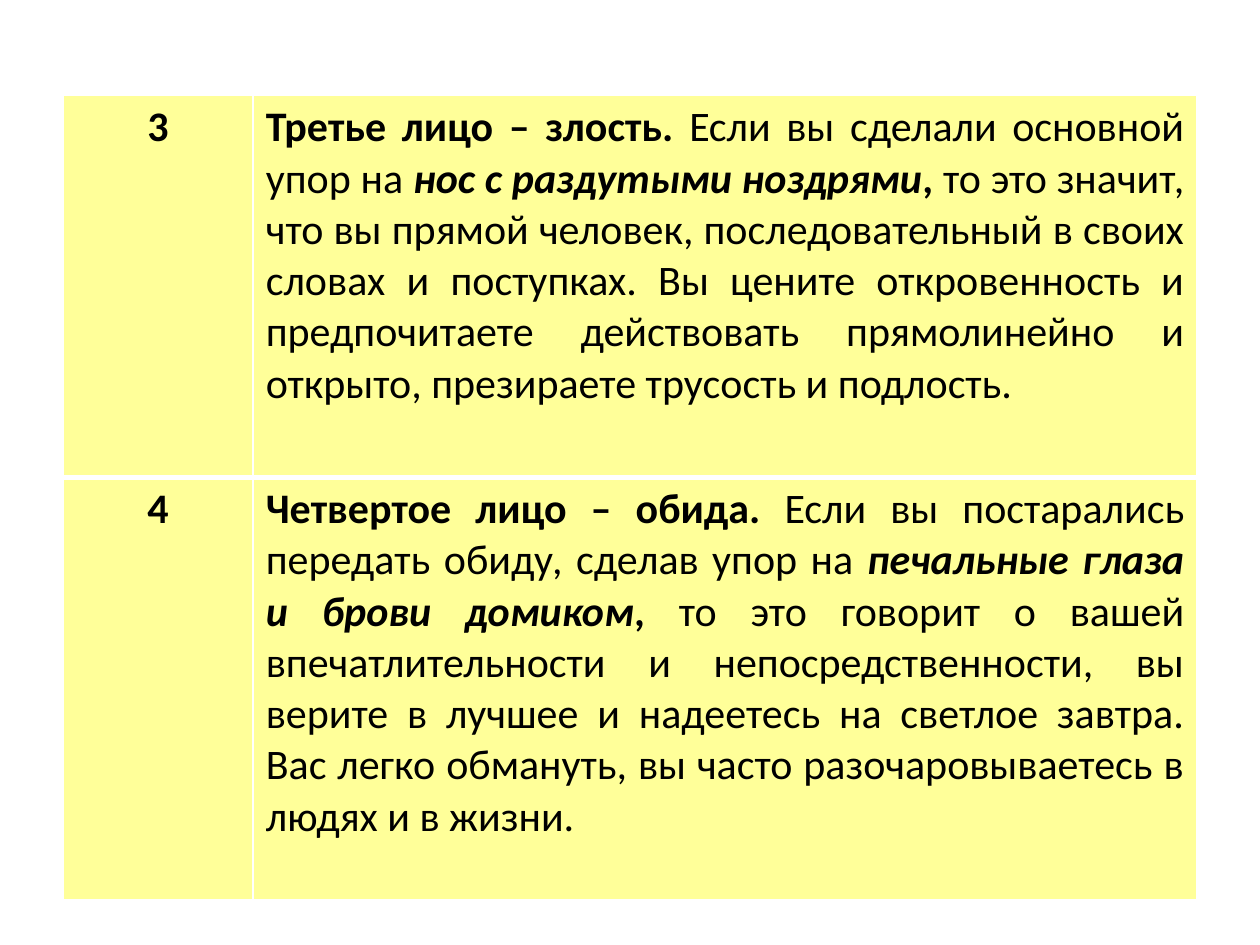
from dataclasses import dataclass

from lxml import etree
from pptx import Presentation
from pptx.dml.color import RGBColor
from pptx.enum.text import PP_ALIGN
from pptx.oxml.ns import qn
from pptx.util import Inches, Pt

CENTER, JUSTIFY = PP_ALIGN.CENTER, PP_ALIGN.JUSTIFY
BLANK_LAYOUT = 6
EDGES = ("lnL", "lnR", "lnT", "lnB")


@dataclass(frozen=True)
class Theme:
    """Colours, type and line widths of the slide."""
    font: str = "Calibri"
    size: int = 24
    ink: str = "000000"
    cell: str = "FFFF99"
    border: str = "FFFFFF"
    thin: int = 1
    thick: int = 3


THEME = Theme()

FACES = [
    ("3", "Третье лицо – злость. ", "Если вы сделали основной упор на ",
     "нос с раздутыми ноздрями",
     "то это значит, что вы прямой человек, последовательный в своих словах "
     "и поступках. Вы цените откровенность и предпочитаете действовать "
     "прямолинейно и открыто, презираете трусость и подлость."),
    ("4", "Четвертое лицо – обида. ",
     "Если вы постарались передать обиду, сделав упор на ",
     "печальные глаза и брови домиком",
     "то это говорит о вашей впечатлительности и непосредственности, вы "
     "верите в лучшее и надеетесь на светлое завтра. Вас легко обмануть, вы "
     "часто разочаровываетесь в людях и в жизни."),
]


def set_borders(cell, bottom):
    """Draw the four cell edges, with the given width at the bottom."""
    properties = cell._tc.get_or_add_tcPr()
    for edge in EDGES:
        width = bottom if edge == "lnB" else THEME.thin
        line = etree.SubElement(properties, qn(f"a:{edge}"), w=str(Pt(width)))
        fill = etree.SubElement(line, qn("a:solidFill"))
        etree.SubElement(fill, qn("a:srgbClr"), val=THEME.border)


def fill_cell(cell, pieces, alignment, bottom):
    """Write (text, bold, italic) pieces into a coloured cell."""
    set_borders(cell, bottom)
    cell.fill.solid()
    cell.fill.fore_color.rgb = RGBColor.from_string(THEME.cell)
    paragraph = cell.text_frame.paragraphs[0]
    paragraph.alignment = alignment
    for text, bold, italic in pieces:
        run = paragraph.add_run()
        run.text = text
        run.font.name = THEME.font
        run.font.size = Pt(THEME.size)
        run.font.bold = bold
        run.font.italic = italic
        run.font.color.rgb = RGBColor.from_string(THEME.ink)


def add_faces_table(slide, left, top, column_widths, row_heights):
    """Place the table of numbered faces and their meanings."""
    table = slide.shapes.add_table(
        len(FACES), len(column_widths), left, top,
        sum(column_widths), sum(row_heights)).table
    table.first_row = False
    table.horz_banding = False
    for column, width in zip(table.columns, column_widths):
        column.width = width
    for index, (number, title, lead, feature, meaning) in enumerate(FACES):
        table.rows[index].height = row_heights[index]
        bottom = THEME.thick if index == 0 else THEME.thin
        description = [(title, True, False), (lead, False, False),
                       (feature, True, True), (", ", True, False),
                       (meaning, False, False)]
        fill_cell(table.cell(index, 0), [(number, True, False)], CENTER, bottom)
        fill_cell(table.cell(index, 1), description, JUSTIFY, bottom)


def main():
    """Build and save the slide."""
    deck = Presentation()
    deck.slide_width, deck.slide_height = Inches(10), Inches(7.5)
    slide = deck.slides.add_slide(deck.slide_layouts[BLANK_LAYOUT])
    add_faces_table(slide, Inches(0.5), Inches(0.76),
                    (Inches(1.51), Inches(7.49)),
                    (Inches(3.03), Inches(3.35)))
    deck.save("out.pptx")


if __name__ == "__main__":
    main()
